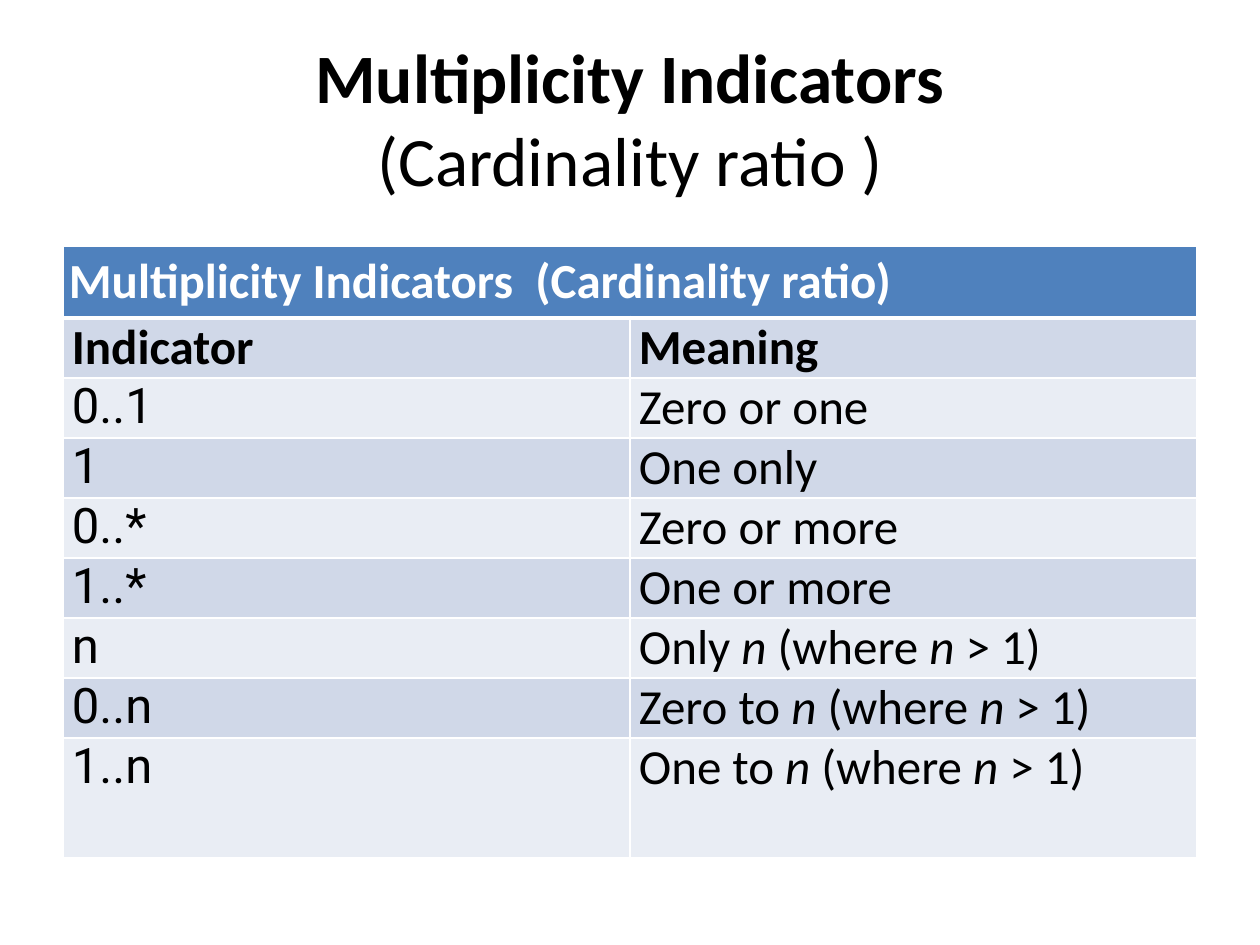
from pptx import Presentation, util as u
from pptx.dml.color import RGBColor
from pptx.enum import text as t
from pptx.oxml import parse_xml
from pptx.oxml.ns import nsdecls

PX = 914400 // 126
HUES = {"ink": "000000", "paper": "FFFFFF", "head": "4F81BD",
        "dark": "D0D8E8", "light": "E9EDF4"}
SANS, CODE = "Calibri", "Roboto"
# Underscores mark italic parts
ROWS = [
    ("Indicator", "Meaning"),
    ("0..1", "Zero or one"),
    ("1", "One only"),
    ("0..*", "Zero or more"),
    ("1..*", "One or more"),
    ("n", "Only _n_ (where _n_ > 1)"),
    ("0..n", "Zero to _n_ (where _n_ > 1)"),
    ("1..n", "One to _n_ (where _n_ > 1)"),
]
HEAD, ROW, LAST = 72, 60, 120


def px(n):
    return u.Emu(n * PX)


def put(obj, **vals):
    for name, val in vals.items():
        setattr(obj, name, val)


def add_run(para, words, hue="ink", **form):
    run = para.add_run()
    run.text = words
    put(run.font, **form)
    run.font.color.rgb = RGBColor.from_string(HUES[hue])


def edge(cell, side, width):
    cell._tc.get_or_add_tcPr().append(parse_xml(
        f'<a:ln{side} {nsdecls("a")} w="{u.Pt(width)}"><a:solidFill>'
        f'<a:srgbClr val="{HUES["paper"]}"/></a:solidFill></a:ln{side}>'))


def dress(cell, fill, pad_x, pad_y, top=1, base=1):
    put(cell, margin_left=px(pad_x), margin_right=px(pad_x),
        margin_top=px(pad_y), margin_bottom=px(pad_y))
    for side, width in zip("LRTB", (1, 1, top, base)):
        edge(cell, side, width)
    cell.fill.solid()
    cell.fill.fore_color.rgb = RGBColor.from_string(HUES[fill])


def add_title(slide):
    title = slide.shapes.title
    put(title, left=px(63), top=px(38), width=px(1134), height=px(158))
    frame = title.text_frame
    put(frame, auto_size=t.MSO_AUTO_SIZE.NONE, word_wrap=True,
        vertical_anchor=t.MSO_ANCHOR.MIDDLE)
    para = frame.paragraphs[0]
    para.alignment = t.PP_ALIGN.CENTER
    form = dict(size=u.Pt(39.6), name=SANS)
    add_run(para, "Multiplicity Indicators", bold=True, **form)
    para.add_line_break()
    add_run(para, "(Cardinality ratio )", bold=False, **form)


def add_grid(slide):
    highs = [HEAD] + [ROW] * (len(ROWS) - 1) + [LAST]
    grid = slide.shapes.add_table(len(highs), 2, px(63), px(246),
                                  px(1134), px(sum(highs))).table
    for row, high in zip(grid.rows, highs):
        row.height = px(high)

    # Heading across both columns
    grid.cell(0, 0).merge(grid.cell(0, 1))
    for col in range(2):
        dress(grid.cell(0, col), "head", 6, 6, base=3)
    add_run(grid.cell(0, 0).text_frame.paragraphs[0],
            "Multiplicity Indicators  (Cardinality ratio)", "paper",
            size=u.Pt(28), name=SANS, bold=True)

    # Banded rows, the first one bold
    for r, row in enumerate(ROWS, 1):
        for c, words in enumerate(row):
            cell = grid.cell(r, c)
            dress(cell, "dark" if r % 2 else "light", 9, 0,
                  top=3 if r == 1 else 1)
            para = cell.text_frame.paragraphs[0]
            font = CODE if c == 0 and r > 1 else SANS
            for i, part in enumerate(words.split("_")):
                add_run(para, part, size=u.Pt(28), name=font,
                        bold=r == 1, italic=i % 2 == 1)


def main():
    deck = Presentation()
    put(deck, slide_width=u.Inches(10), slide_height=u.Inches(7.5))
    slide = deck.slides.add_slide(deck.slide_layouts[5])
    add_title(slide)
    add_grid(slide)
    deck.save("out.pptx")


if __name__ == "__main__":
    main()
